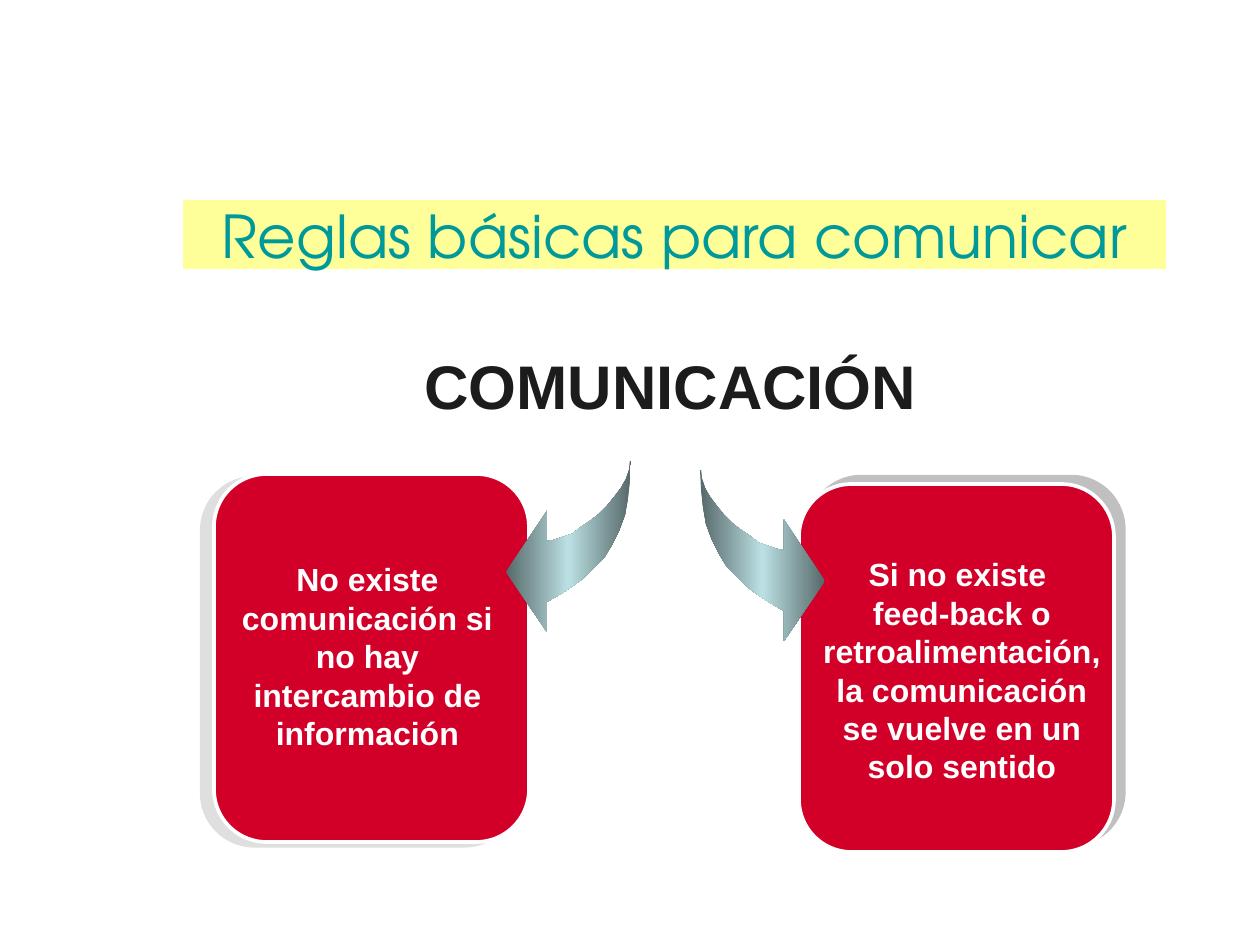
"""Build a slide on the basic rules of communication."""
from lxml import etree
from pptx import Presentation
from pptx.dml.color import RGBColor
from pptx.enum.shapes import MSO_SHAPE as Shape
from pptx.enum.text import MSO_ANCHOR as Anchor, MSO_AUTO_SIZE as AutoSize, PP_ALIGN as Align
from pptx.oxml import parse_xml
from pptx.oxml.ns import nsdecls, qn
from pptx.util import Pt

PX = 10320
COLORS = {
    "banner": "FFFF99", "title": "009999", "topic": "1C1C1C", "card": "D20028",
    "white": "FFFFFF", "shadow": "C0C0C0", "arrow_dark": "566869", "arrow_light": "BBE0E3",
}
TITLE = ("Reglas básicas para comunicar", (183, 200, 983, 69))
TOPIC = ("COMUNICACIÓN", (316, 375, 709, 19))
CARD_SIZE = (315, 368)
RULES = [
    {"lines": ["Si no existe ",
               "feed-back o retroalimentación, la comunicación se vuelve en un solo sentido"],
     "card": (799, 484), "words": (820, 555, 284, 230), "inset": (0, 0),
     "shadow": (10, 323, 100), "arrow": (700, 470), "side": 1},
    {"lines": ["No existe comunicación si no hay intercambio de información"],
     "card": (214, 474), "words": (227, 554, 281, 205), "inset": (12, 6),
     "shadow": (10.4, 163, 50), "arrow": (631, 461), "side": -1},
]
ARROW = [
    (0, 0), (1, 19), (3, 37), (6, 54), (12, 70), (19, 84), (27, 97), (39, 109), (51, 120),
    (67, 131), (84, 141), (84, 171), (125, 111), (84, 50), (84, 80), (77, 79), (68, 76),
    (59, 73), (50, 66), (41, 60), (32, 53), (24, 45), (16, 35), (10, 27), (5, 18), (2, 9), (1, 0),
]


def rgb(name):
    return RGBColor.from_string(COLORS[name])


def emu(*lengths):
    return [length * PX for length in lengths]


def write(holder, lines, size, color, font="Arial", bold=True, inset=(13, 6), anchor=Anchor.MIDDLE):
    frame = holder.text_frame
    frame.word_wrap = True
    frame.auto_size = AutoSize.NONE
    frame.vertical_anchor = anchor
    frame.margin_left = frame.margin_right = inset[0] * PX
    frame.margin_top = frame.margin_bottom = inset[1] * PX
    for index, line in enumerate(lines):
        paragraph = frame.add_paragraph() if index else frame.paragraphs[0]
        paragraph.alignment = Align.CENTER
        run = paragraph.add_run()
        run.text = line
        run.font.name, run.font.size, run.font.bold = font, Pt(size), bold
        run.font.color.rgb = rgb(color)


def cast_shadow(card, distance, angle, opacity):
    card.shadow.inherit = False
    effects = card._element.spPr.find(qn("a:effectLst"))
    effects.append(parse_xml(
        f'<a:outerShdw {nsdecls("a")} blurRad="0" dist="{Pt(distance)}" dir="{angle * 60000}" '
        f'algn="ctr" rotWithShape="0"><a:srgbClr val="{COLORS["shadow"]}">'
        f'<a:alpha val="{opacity * 1000}"/></a:srgbClr></a:outerShdw>'))


def add_card(slide, rule):
    card = slide.shapes.add_shape(Shape.ROUNDED_RECTANGLE, *emu(*rule["card"], *CARD_SIZE))
    card.adjustments[0] = 0.167
    card.fill.solid()
    card.fill.fore_color.rgb = rgb("card")
    card.line.color.rgb = rgb("white")
    card.line.width = Pt(3)
    cast_shadow(card, *rule["shadow"])
    words = slide.shapes.add_textbox(*emu(*rule["words"]))
    write(words, rule["lines"], 26, "white", inset=rule["inset"], anchor=Anchor.TOP)


def add_arrow(slide, rule):
    left, top = rule["arrow"]
    points = [(left + rule["side"] * x, top + y) for x, y in ARROW]
    outline = slide.shapes.build_freeform(*points[0], scale=PX)
    outline.add_line_segments(points[1:], close=True)
    arrow = outline.convert_to_shape()
    arrow.shadow.inherit = False
    arrow.line.fill.background()
    arrow.fill.gradient()
    arrow.fill.gradient_angle = 0
    stops = arrow._element.spPr.find(qn("a:gradFill")).find(qn("a:gsLst"))
    for stop in list(stops):
        stops.remove(stop)
    for position, name in ((0, "arrow_dark"), (50, "arrow_light"), (100, "arrow_dark")):
        stop = etree.SubElement(stops, qn("a:gs"), pos=str(position * 1000))
        etree.SubElement(stop, qn("a:srgbClr"), val=COLORS[name])


def main():
    deck = Presentation()
    deck.slide_width, deck.slide_height = emu(1260, 945)
    slide = deck.slides.add_slide(deck.slide_layouts[5])

    title_text, title_place = TITLE
    title = slide.shapes.title
    title.left, title.top, title.width, title.height = emu(*title_place)
    title.fill.solid()
    title.fill.fore_color.rgb = rgb("banner")
    write(title, [title_text], 48, "title", font="TeX Gyre Adventor", bold=False)

    for rule in RULES:
        add_card(slide, rule)
    for rule in RULES:
        add_arrow(slide, rule)

    topic_text, topic_place = TOPIC
    write(slide.shapes.add_textbox(*emu(*topic_place)), [topic_text], 50, "topic")
    deck.save("out.pptx")


if __name__ == "__main__":
    main()
